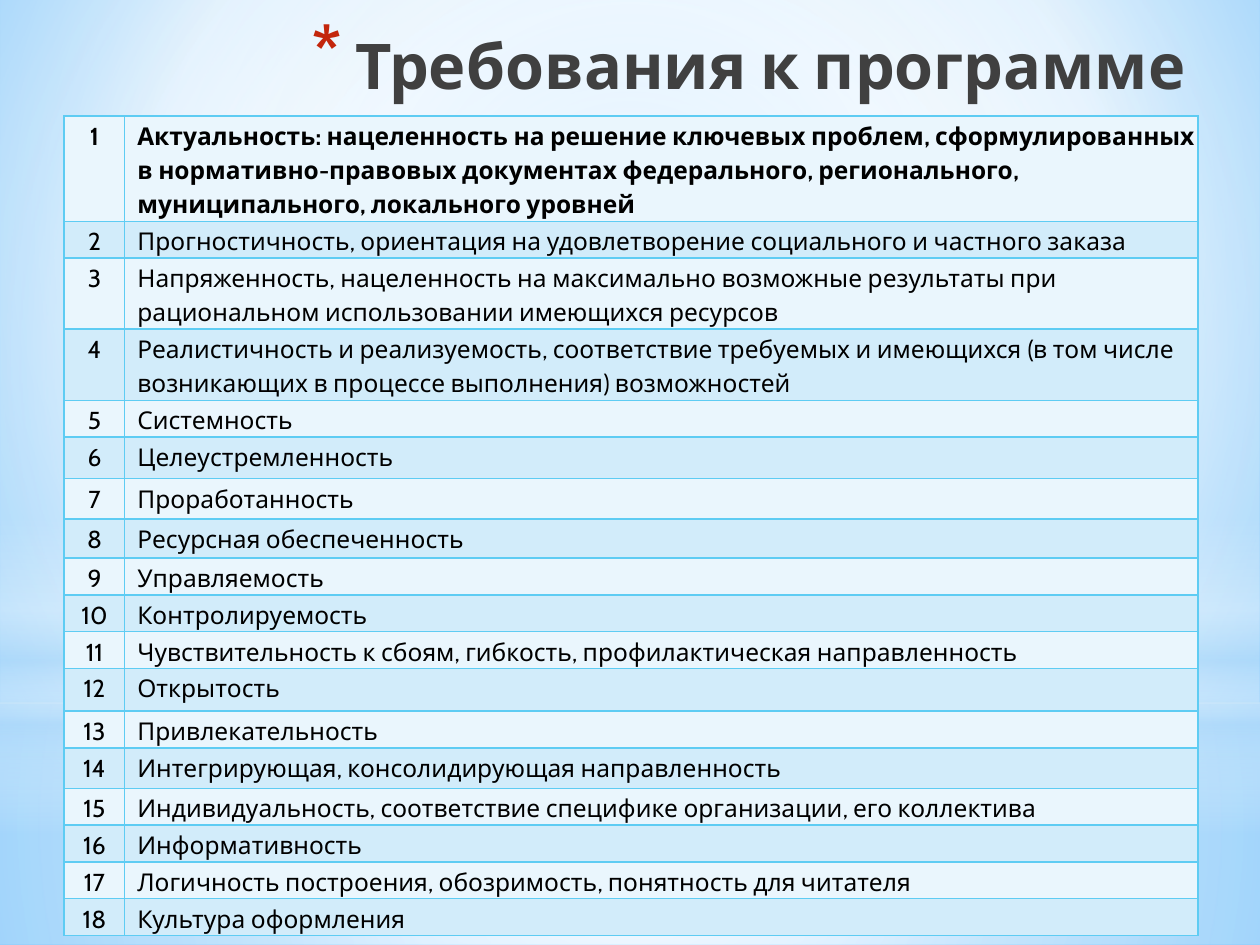
"""Build a slide that lists eighteen requirements for a programme."""
import pptx
import pptx.dml.color
import pptx.enum.shapes
import pptx.enum.text
import pptx.oxml
import pptx.oxml.ns
import pptx.util

Inches = pptx.util.Inches
Pt = pptx.util.Pt
qn = pptx.oxml.ns.qn
Align = pptx.enum.text.PP_ALIGN
Shape = pptx.enum.shapes.MSO_SHAPE

THEME = {
    "font": "Cabin", "head": 36, "body": 14,
    "ink": "000000", "star": "C3260C", "line": "5ECCF3",
    "bands": ("EAF6FD", "D2ECFA"),
    "back": [(0, "9ED5FF", 100), (60, "FFFFFF", 100), (100, "5BB9FF", 100)],
    "title": [(0, "000000", 100), (40, "404040", 100), (100, "212745", 65)],
}
MID = (50, 50, 50, 50)
PANELS = [
    (Shape.RECTANGLE, 5.58, 1.92, MID,
     [(0, "FFFFFF", 91), (37, "FFFFFF", 76), (100, "B4DCFA", 79)]),
    (Shape.RECTANGLE, 0, 5.58, MID,
     [(0, "FFFFFF", 89), (48, "FFFFFF", 62), (100, "B4DCFA", 79)]),
    (Shape.RECTANGLE, 4.12, 2.5, None,
     [(0, "FFFFFF", 0), (29, "FFFFFF", 30), (45, "B4DCFA", 40),
      (55, "FFFFFF", 26), (65, "B4DCFA", 60), (100, "FFFFFF", 0)]),
    (Shape.OVAL, 1.75, 5.58, MID, [(0, "FFFFFF", 100), (56, "FFFFFF", 0)]),
]
TITLE = "Требования к программе"
ROWS = [
    (0.53, "Актуальность: нацеленность на решение ключевых проблем, "
           "сформулированных в нормативно-правовых документах федерального, "
           "регионального, муниципального, локального уровней"),
    (0.26, "Прогностичность, ориентация на удовлетворение социального и частного заказа"),
    (0.26, "Напряженность, нацеленность на максимально возможные результаты "
           "при рациональном использовании имеющихся ресурсов"),
    (0.53, "Реалистичность и реализуемость, соответствие требуемых и имеющихся "
           "(в том числе возникающих в процессе выполнения) возможностей"),
    (0.26, "Системность"),
    (0.33, "Целеустремленность"),
    (0.32, "Проработанность"),
    (0.31, "Ресурсная обеспеченность"),
    (0.29, "Управляемость"),
    (0.28, "Контролируемость"),
    (0.26, "Чувствительность к сбоям, гибкость, профилактическая направленность"),
    (0.34, "Открытость"),
    (0.26, "Привлекательность"),
    (0.32, "Интегрирующая, консолидирующая направленность"),
    (0.26, "Индивидуальность, соответствие специфике организации, его коллектива"),
    (0.28, "Информативность"),
    (0.28, "Логичность построения, обозримость, понятность для читателя"),
    (0.28, "Культура оформления"),
]
COLS = (0.48, 8.52)


def make(xml):
    return pptx.oxml.parse_xml(f'<a:wrap {pptx.oxml.ns.nsdecls("a")}>{xml}</a:wrap>')[0]


def blend(fill, root, stops, focus=None):
    fill.gradient()
    old = root.find(".//" + qn("a:gradFill"))
    marks = "".join(
        f'<a:gs pos="{pos * 1000}"><a:srgbClr val="{tint}">'
        f'<a:alpha val="{alpha * 1000}"/></a:srgbClr></a:gs>'
        for pos, tint, alpha in stops)
    if focus:
        sides = " ".join(f'{side}="{num * 1000}"' for side, num in zip("ltrb", focus))
        way = f'<a:path path="circle"><a:fillToRect {sides}/></a:path>'
    else:
        way = '<a:lin ang="5400000" scaled="0"/>'
    new = make(f'<a:gradFill rotWithShape="1"><a:gsLst>{marks}</a:gsLst>{way}</a:gradFill>')
    old.getparent().replace(old, new)


def add_panel(slide, kind, top, height, focus, stops):
    panel = slide.shapes.add_shape(kind, 0, Inches(top), Inches(10), Inches(height))
    panel.shadow.inherit = False
    panel.line.fill.background()
    blend(panel.fill, panel._element.spPr, stops, focus)


def set_title(slide):
    title = slide.shapes.title
    slide.shapes._spTree.append(title._element)
    title.left, title.top = Inches(0.51), Inches(0.13)
    title.width, title.height = Inches(9), Inches(0.76)
    frame = title.text_frame
    frame.text = TITLE
    frame.word_wrap = True
    frame.vertical_anchor = pptx.enum.text.MSO_ANCHOR.MIDDLE
    par = frame.paragraphs[0]
    par.alignment = Align.RIGHT
    props = par._p.get_or_add_pPr()
    props.set("marL", str(Inches(0.35)))
    props.set("indent", str(Inches(-0.35)))
    for xml in (f'<a:buClr><a:srgbClr val="{THEME["star"]}"/></a:buClr>',
                '<a:buSzPct val="128000"/>', '<a:buChar char="*"/>'):
        props.append(make(xml))
    run = par.runs[0]
    run.font.name, run.font.size, run.font.bold = THEME["font"], Pt(THEME["head"]), True
    blend(run.font.fill, run._r, THEME["title"])


def set_cell(cell, text, tint, bold, center):
    cell.text = text
    cell.margin_left = cell.margin_right = Inches(0.01)
    cell.margin_top = cell.margin_bottom = Inches(0.01)
    par = cell.text_frame.paragraphs[0]
    par.line_spacing = 1.15
    if center:
        par.alignment = Align.CENTER
    else:
        par._p.get_or_add_pPr().set("marL", str(Inches(0.09)))
    font = par.runs[0].font
    font.name, font.size, font.bold = THEME["font"], Pt(THEME["body"]), bold
    font.color.rgb = pptx.dml.color.RGBColor.from_string(THEME["ink"])
    props = cell._tc.get_or_add_tcPr()
    for side in "LRTB":
        props.append(make(
            f'<a:ln{side} w="{Pt(1)}"><a:solidFill><a:srgbClr val="{THEME["line"]}"/>'
            f'</a:solidFill></a:ln{side}>'))
    cell.fill.solid()
    cell.fill.fore_color.rgb = pptx.dml.color.RGBColor.from_string(tint)


def add_list(slide):
    total = sum(height for height, _ in ROWS)
    table = slide.shapes.add_table(
        len(ROWS), len(COLS), Inches(0.51), Inches(0.92),
        Inches(sum(COLS)), Inches(total)).table
    table.first_row = table.horz_banding = False
    for col, width in zip(table.columns, COLS):
        col.width = Inches(width)
    for row, (height, text) in enumerate(ROWS):
        table.rows[row].height = Inches(height)
        for col, words in enumerate((str(row + 1), text)):
            set_cell(table.cell(row, col), words, THEME["bands"][row % 2],
                     row == 0, col == 0)


def main():
    deck = pptx.Presentation()
    deck.slide_width, deck.slide_height = Inches(10), Inches(7.5)
    slide = deck.slides.add_slide(deck.slide_layouts[5])
    blend(slide.background.fill, slide._element, THEME["back"], (20, 10, 20, 60))
    for panel in PANELS:
        add_panel(slide, *panel)
    set_title(slide)
    add_list(slide)
    deck.save("out.pptx")


if __name__ == "__main__":
    main()
